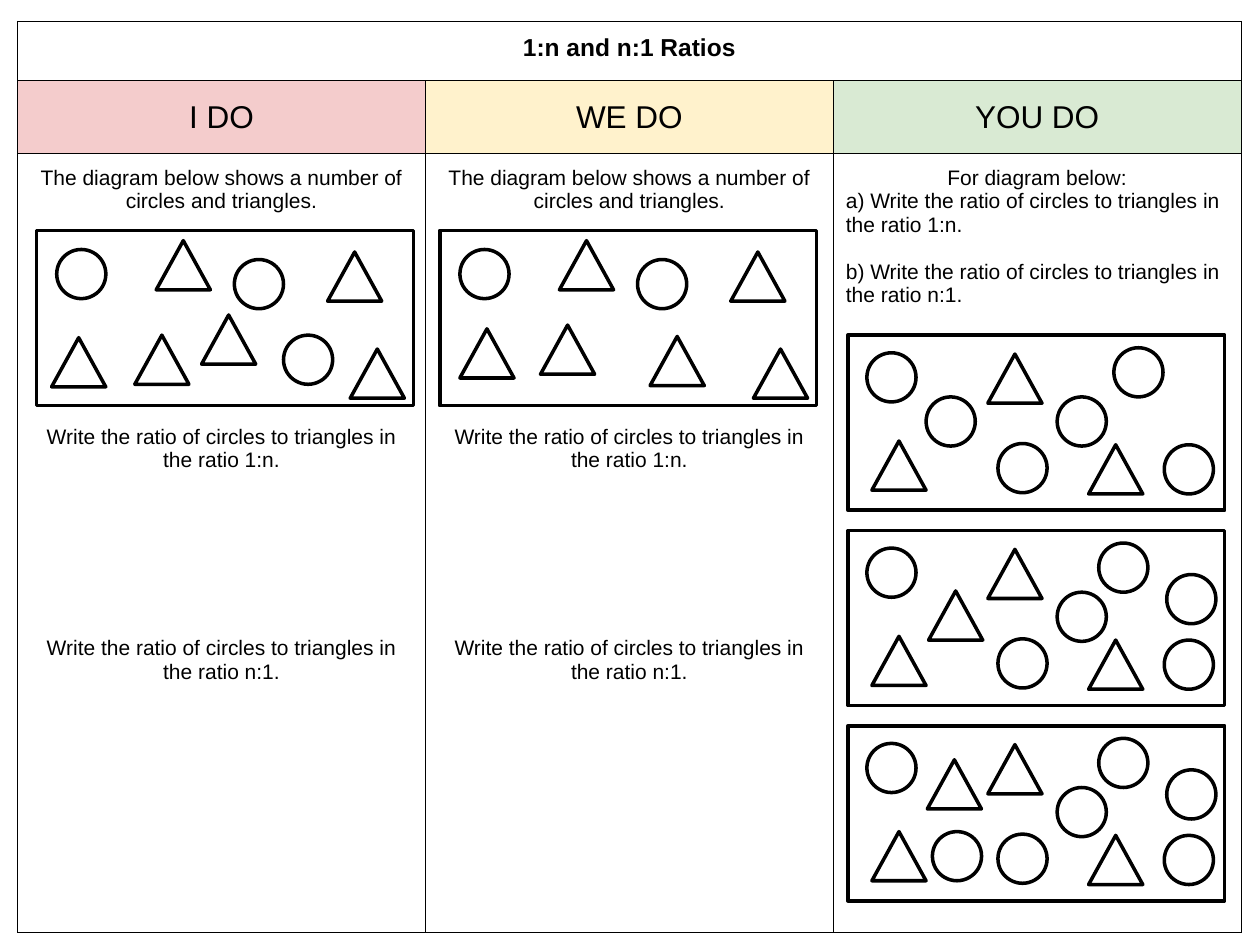
from dataclasses import dataclass

from lxml.etree import SubElement
from pptx import Presentation
from pptx.dml.color import RGBColor
from pptx.enum.shapes import MSO_SHAPE as Shape
from pptx.enum.text import MSO_ANCHOR as Anchor, PP_ALIGN as Align
from pptx.oxml.ns import qn
from pptx.util import Inches, Pt


@dataclass(frozen=True)
class Theme:
    font: str = "Arial"
    ink: RGBColor = RGBColor(0, 0, 0)
    i_do: RGBColor = RGBColor.from_string("F4CCCC")
    we_do: RGBColor = RGBColor.from_string("FFF2CC")
    you_do: RGBColor = RGBColor.from_string("D9EAD3")
    title: Pt = Pt(14)
    heading: Pt = Pt(18)
    body: Pt = Pt(12)
    outline: Pt = Pt(2)
    border: Pt = Pt(0.75)


theme = Theme()


def fill_cell(cell, paragraphs, size, fill=None, anchor=Anchor.TOP, bold=False):
    """Write (text, alignment, space before in points) paragraphs and style the cell."""
    cell.margin_left = cell.margin_right = Inches(0.1)
    cell.margin_top = cell.margin_bottom = Inches(0.1)
    cell.vertical_anchor = anchor
    frame = cell.text_frame
    for index, (text, alignment, space) in enumerate(paragraphs):
        paragraph = frame.add_paragraph() if index else frame.paragraphs[0]
        paragraph.text = text
        paragraph.alignment = alignment
        paragraph.space_before = Pt(space)
        paragraph.font.name = theme.font
        paragraph.font.size = size
        paragraph.font.bold = bold
        paragraph.font.color.rgb = theme.ink

    # Borders come before the fill in the cell properties
    properties = cell._tc.get_or_add_tcPr()
    for side in ("a:lnL", "a:lnR", "a:lnT", "a:lnB"):
        line = SubElement(properties, qn(side), w=str(theme.border))
        solid = SubElement(line, qn("a:solidFill"))
        SubElement(solid, qn("a:srgbClr"), val=str(theme.ink))
    if fill is None:
        cell.fill.background()
    else:
        cell.fill.solid()
        cell.fill.fore_color.rgb = fill


def add_outline(kind, left, top, width, height):
    shape = slide.shapes.add_shape(
        kind, Inches(left), Inches(top), Inches(width), Inches(height))
    shape.shadow.inherit = False
    shape.fill.background()
    shape.line.color.rgb = theme.ink
    shape.line.width = theme.outline


presentation = Presentation()
presentation.slide_width = Inches(10)
presentation.slide_height = Inches(7.5)
slide = presentation.slides.add_slide(presentation.slide_layouts[6])

# Lesson table
row_heights = (0.47, 0.58, 6.18)
table = slide.shapes.add_table(
    3, 3, Inches(0.14), Inches(0.17), Inches(9.71), Inches(sum(row_heights))).table
table.first_row = table.horz_banding = False
for row, height in zip(table.rows, row_heights):
    row.height = Inches(height)
for column in table.columns:
    column.width = Inches(9.71 / 3)

# Title row
for cell in table.rows[0].cells:
    fill_cell(cell, [], theme.title)
table.cell(0, 0).merge(table.cell(0, 2))
fill_cell(table.cell(0, 0), [("1:n and n:1 Ratios", Align.CENTER, 0)],
          theme.title, bold=True)

# Headings and questions, with room left for the diagrams and the working
worked_example = [
    ("The diagram below shows a number of circles and triangles.", Align.CENTER, 0),
    ("Write the ratio of circles to triangles in the ratio 1:n.", Align.CENTER, 121),
    ("Write the ratio of circles to triangles in the ratio n:1.", Align.CENTER, 94),
]
practice = [
    ("For diagram below:", Align.CENTER, 0),
    ("a) Write the ratio of circles to triangles in the ratio 1:n.", Align.LEFT, 0),
    ("b) Write the ratio of circles to triangles in the ratio n:1.", Align.LEFT, 13.4),
]
lesson_columns = [
    ("I DO", theme.i_do, worked_example),
    ("WE DO", theme.we_do, worked_example),
    ("YOU DO", theme.you_do, practice),
]
for index, (heading, color, questions) in enumerate(lesson_columns):
    fill_cell(table.cell(1, index), [(heading, Align.CENTER, 0)],
              theme.heading, color, Anchor.MIDDLE)
    fill_cell(table.cell(2, index), questions, theme.body)

# Diagrams: frame corner, then circle and triangle offsets from that corner
example_circles = [(0.16, 0.15), (1.57, 0.23)]
example_triangles = [(2.31, 0.17), (0.95, 0.08), (2.49, 0.94)]
practice_circles = [(0.15, 0.14), (1.19, 0.86), (1.66, 0.49), (2.51, 0.87)]
practice_triangles = [(1.91, 0.87), (1.11, 0.15), (0.19, 0.84)]
right_circles = [(1.99, 0.1), (2.53, 0.35)]
diagrams = [
    (0.29, 1.83, example_circles + [(1.96, 0.83)],
     example_triangles + [(0.12, 0.85), (0.78, 0.83), (1.31, 0.67)]),
    (3.49, 1.83, example_circles,
     example_triangles + [(1.67, 0.84), (0.16, 0.78), (0.8, 0.75)]),
    (6.73, 2.66, practice_circles + [(0.62, 0.49), (2.11, 0.1)], practice_triangles),
    (6.73, 4.21, practice_circles + right_circles, practice_triangles + [(0.64, 0.48)]),
    (6.73, 5.76, practice_circles + right_circles + [(0.67, 0.84)],
     practice_triangles + [(0.63, 0.27)]),
]
for left, top, circles, triangles in diagrams:
    add_outline(Shape.RECTANGLE, left, top, 2.99, 1.39)
    for x, y in circles:
        add_outline(Shape.OVAL, left + x, top + y, 0.39, 0.39)
    for x, y in triangles:
        add_outline(Shape.ISOSCELES_TRIANGLE, left + x, top + y, 0.43, 0.39)

presentation.save("out.pptx")
